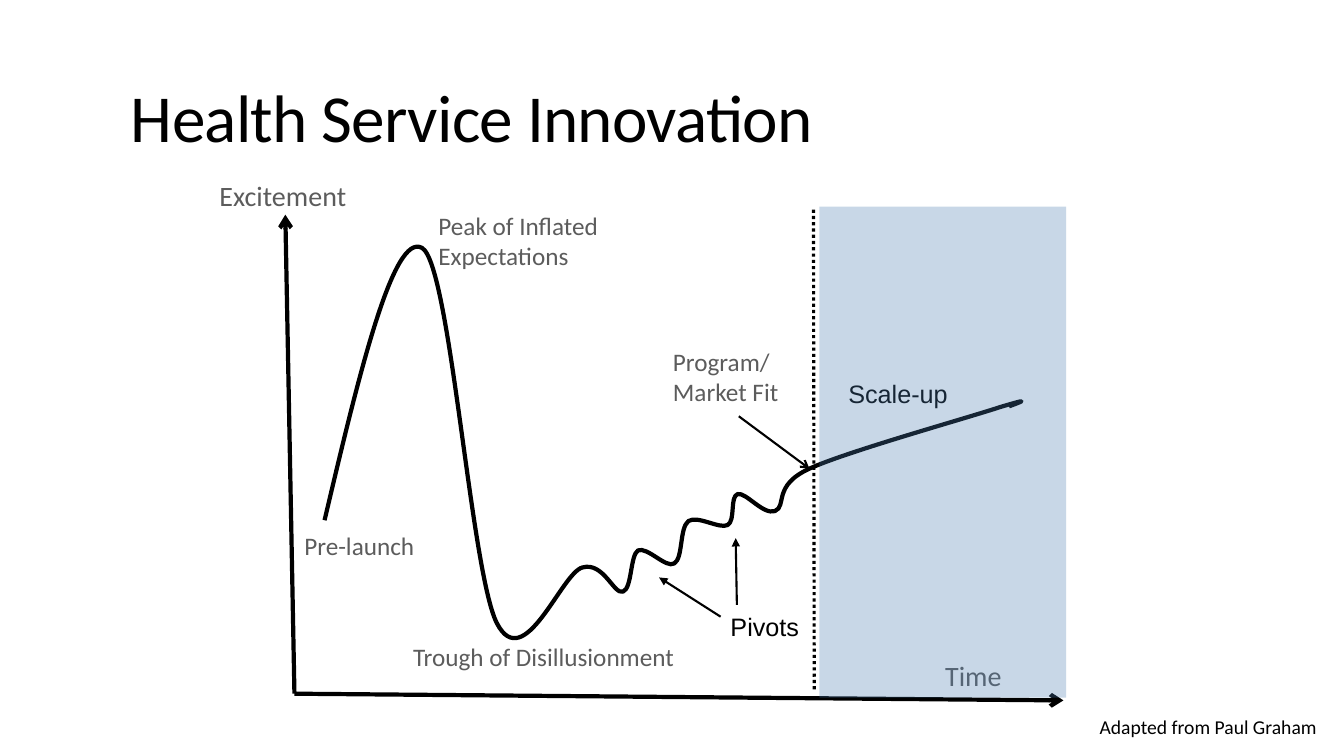
from lxml.etree import SubElement
from pptx import Presentation
from pptx.dml.color import RGBColor
from pptx.enum.dml import MSO_LINE_DASH_STYLE as Dash
from pptx.enum.shapes import MSO_CONNECTOR as Connector, MSO_SHAPE as Shape
from pptx.enum.text import MSO_ANCHOR as Anchor
from pptx.oxml.ns import qn
from pptx.util import Cm, Pt

COLORS = {"ink": "000000", "label": "5C5C5C", "band": "4B7DB0"}
LABEL_HEIGHT = 1.02

# Start point, then two control points and an end point for each bend
CURVE_START = (3.18, 9.11)
CURVE_BENDS = [
    ((4.04, 5.47), (4.91, 1.82), (5.64, 2.25)),
    ((6.35, 2.68), (6.86, 10.38), (7.52, 11.7)),
    ((8.21, 13.04), (9.15, 10.43), (9.68, 10.3)),
    ((10.21, 10.15), (10.47, 10.99), (10.7, 10.91)),
    ((10.93, 10.83), (10.88, 10), (11.08, 9.87)),
    ((11.31, 9.77), (11.79, 10.33), (11.99, 10.2)),
    ((12.22, 10.07), (12.12, 9.31), (12.35, 9.13)),
    ((12.58, 8.98), (13.14, 9.34), (13.34, 9.23)),
    ((13.54, 9.11), (13.39, 8.52), (13.59, 8.45)),
    ((13.8, 8.4), (14.23, 8.98), (14.53, 8.88)),
    ((14.84, 8.75), (14.46, 8.24), (15.4, 7.81)),
    ((16.34, 7.38), (19.36, 6.54), (20.2, 6.26)),
    ((21.04, 6.01), (20.73, 6.13), (20.43, 6.24)),
]


def rgb(name):
    return RGBColor.from_string(COLORS[name])


def add_text(page, text, left, top, width, height, *, size=18, font="Calibri",
             color="label", anchor=Anchor.TOP, line_spacing=None, tracking=None):
    """Add a text box; each line of the text becomes a paragraph."""
    box = page.shapes.add_textbox(Cm(left), Cm(top), Cm(width), Cm(height))
    frame = box.text_frame
    frame.word_wrap = True
    frame.vertical_anchor = anchor
    for index, line in enumerate(text.split("\n")):
        para = frame.add_paragraph() if index else frame.paragraphs[0]
        if line_spacing:
            para.line_spacing = line_spacing
        span = para.add_run()
        span.text = line
        span.font.size = Pt(size)
        span.font.name = font
        span.font.color.rgb = rgb(color)
        if tracking:
            span.font._element.set("spc", str(round(tracking * 100)))


def add_line(page, origin, start, end, *, width=1.5, head=None, dash=None):
    ends = [Cm(base + shift) for point in (start, end)
            for base, shift in zip(origin, point)]
    line = page.shapes.add_connector(Connector.STRAIGHT, *ends)
    line.line.color.rgb = rgb("ink")
    line.line.width = Pt(width)
    if dash:
        line.line.dash_style = dash
    if head:
        SubElement(line.line._get_or_add_ln(), qn("a:tailEnd"), type=head)
    SubElement(line.element.spPr, qn("a:effectLst"))


def add_curve(page, origin):
    """Draw the excitement curve, turning each three segments into a Bézier."""
    def place(point):
        return tuple(Cm(base + shift) for base, shift in zip(origin, point))

    builder = page.shapes.build_freeform(*place(CURVE_START))
    builder.add_line_segments(
        [place(point) for bend in CURVE_BENDS for point in bend], close=False)
    curve = builder.convert_to_shape()
    curve.shadow.inherit = False
    curve.fill.background()
    curve.line.color.rgb = rgb("ink")
    curve.line.width = Pt(3)
    outline = next(curve.element.iter(qn("a:path")))
    segments = outline.findall(qn("a:lnTo"))
    for first in range(0, len(segments), 3):
        bezier = SubElement(outline, qn("a:cubicBezTo"))
        for segment in segments[first:first + 3]:
            bezier.append(segment[0])
            outline.remove(segment)


def add_band(page, left, top, width, height):
    band = page.shapes.add_shape(
        Shape.RECTANGLE, Cm(left), Cm(top), Cm(width), Cm(height))
    band.shadow.inherit = False
    band.fill.solid()
    band.fill.fore_color.rgb = rgb("band")
    band.line.fill.background()
    color = next(band.element.spPr.iter(qn("a:srgbClr")))
    SubElement(color, qn("a:alpha"), val="30000")


def add_title(page, left, top, width, height):
    add_text(page, "Health Service Innovation", left, top, width, height,
             size=48, color="ink", anchor=Anchor.BOTTOM,
             line_spacing=0.85, tracking=-0.5)


def add_diagram(page, left, top):
    origin = (left, top)

    def label(text, x, y, width, height=LABEL_HEIGHT, **style):
        add_text(page, text, left + x, top + y, width, height, **style)

    for tip in ((2.19, 1.41), (21.8, 13.65)):
        add_line(page, origin, (2.42, 13.48), tip, width=3, head="arrow")
    label("Excitement", 0.28, 0.37, 4.09, 1.12, size=20)
    label("Time", 18.57, 12.46, 2.49, 1.12, size=20)
    label("Peak of Inflated Expectations", 5.8, 1.18, 5.89, 1.8)
    label("Trough of Disillusionment", 5.16, 12.03, 8.41)
    add_curve(page, origin)
    add_line(page, origin, (13.62, 6.49), (15.4, 7.81), head="arrow")
    label("Program/\nMarket Fit", 11.71, 4.59, 3.86, 1.8)
    label("Pre-launch", 2.42, 9.23, 4.09)
    label("Scale-up", 16.13, 5.4, 3.1, font="Arial", color="ink")
    add_line(page, origin, (15.52, 13.37), (15.5, 1.21),
             width=2.25, dash=Dash.ROUND_DOT)
    add_band(page, left + 15.65, top + 1.21, 6.22, 12.37)
    for start, end in (((13.16, 11.54), (11.61, 10.55)),
                       ((13.57, 11.24), (13.54, 9.56))):
        add_line(page, origin, start, end, head="triangle")
    label("Pivots", 13.16, 11.29, 2.59, font="Arial", color="ink")


def add_credit(page, left, top, width, height):
    add_text(page, "Adapted from Paul Graham", left, top, width, height,
             size=14, color="ink")


def main():
    deck = Presentation()
    deck.slide_width, deck.slide_height = Cm(33.87), Cm(19.05)
    page = deck.slides.add_slide(deck.slide_layouts[6])
    add_title(page, 3.05, 0.03, 27.94, 4.04)
    add_diagram(page, 5, 4)
    add_credit(page, 27.46, 17.88, 6.05, 0.86)
    deck.save("out.pptx")


if __name__ == "__main__":
    main()
